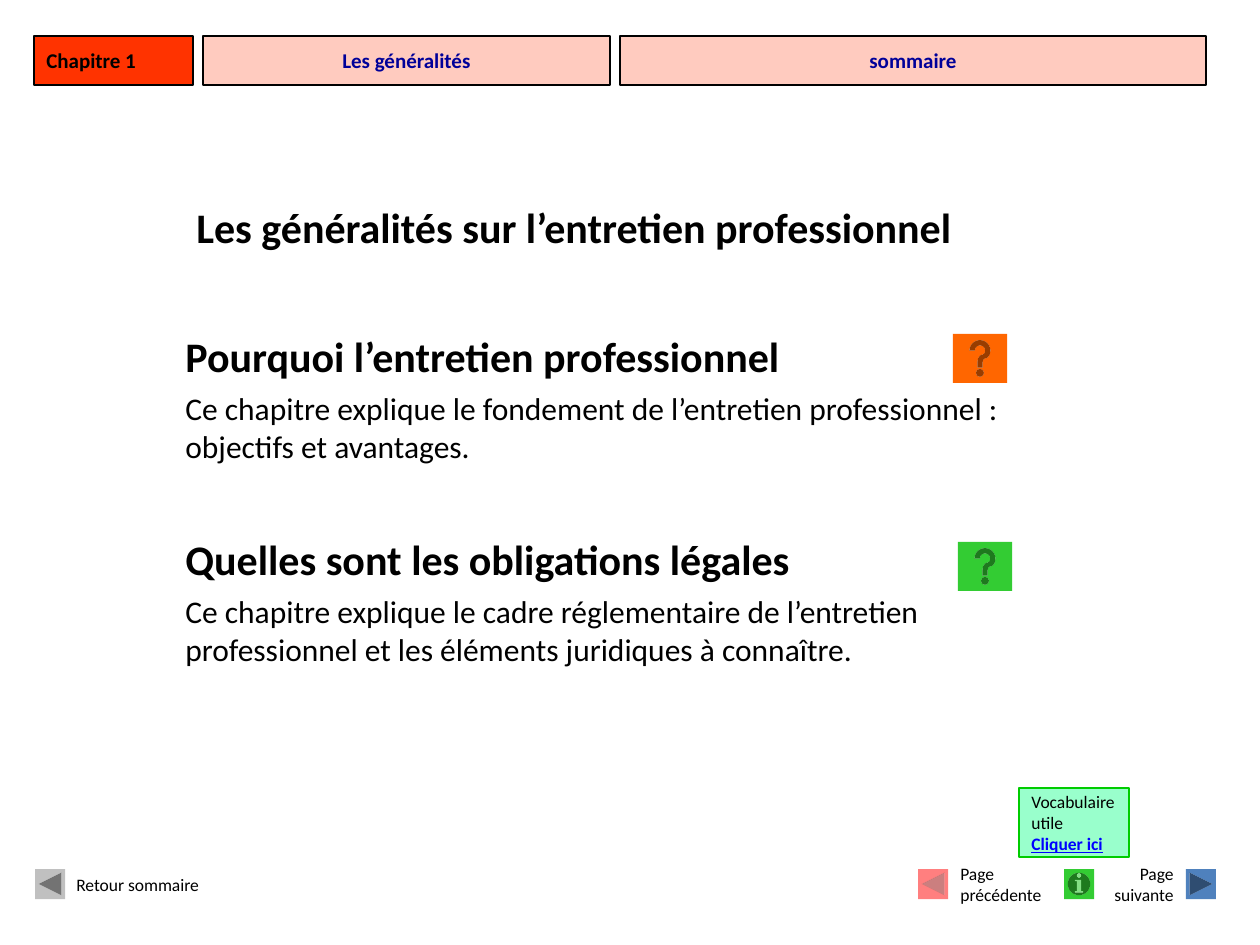
from lxml import etree
from pptx import Presentation
from pptx.dml.color import RGBColor
from pptx.enum.shapes import MSO_SHAPE
from pptx.enum.text import MSO_ANCHOR, PP_ALIGN
from pptx.oxml.ns import qn
from pptx.util import Pt

PX = 914400 / 126
RECT = MSO_SHAPE.RECTANGLE
HELP = MSO_SHAPE.ACTION_BUTTON_HELP
BACK = MSO_SHAPE.ACTION_BUTTON_BACK_OR_PREVIOUS
NEXT = MSO_SHAPE.ACTION_BUTTON_FORWARD_OR_NEXT
INFO = MSO_SHAPE.ACTION_BUTTON_INFORMATION
LEFT, CENTER, RIGHT = PP_ALIGN.LEFT, PP_ALIGN.CENTER, PP_ALIGN.RIGHT
TOP, MIDDLE = MSO_ANCHOR.TOP, MSO_ANCHOR.MIDDLE

BLACK = RGBColor(0x00, 0x00, 0x00)
NAVY = RGBColor(0x00, 0x00, 0x99)
LINK_BLUE = RGBColor(0x00, 0x00, 0xFF)
RED_ORANGE = RGBColor(0xFF, 0x33, 0x00)
ORANGE = RGBColor(0xFF, 0x66, 0x00)
RED = RGBColor(0xFF, 0x00, 0x00)
GREEN = RGBColor(0x33, 0xCC, 0x33)
MINT = RGBColor(0x99, 0xFF, 0xCC)
MINT_EDGE = RGBColor(0x00, 0xCC, 0x00)
GREY = RGBColor(0xC0, 0xC0, 0xC0)
BLUE = RGBColor(0x4F, 0x81, 0xBD)


def paint(shape, color, opacity=100, edge=None):
    """Fill a shape, with opacity in percent and an optional thin edge."""
    shape.fill.solid()
    shape.fill.fore_color.rgb = color
    if opacity < 100:
        rgb = shape._element.spPr.find(qn("a:solidFill")).find(qn("a:srgbClr"))
        etree.SubElement(rgb, qn("a:alpha")).set("val", str(opacity * 1000))
    if edge is None:
        shape.line.fill.background()
    else:
        shape.line.color.rgb = edge
        shape.line.width = Pt(0.75)
    shape.shadow.inherit = False


def write(shape, lines, align=LEFT, anchor=MIDDLE):
    """Write one paragraph per (text, size, bold, color, space before) line."""
    frame = shape.text_frame
    frame.word_wrap = True
    frame.vertical_anchor = anchor
    if align == LEFT:
        frame.margin_right = 0
    for i, (text, size, bold, color, before) in enumerate(lines):
        paragraph = frame.add_paragraph() if i else frame.paragraphs[0]
        paragraph.alignment = align
        paragraph.space_before = Pt(before)
        run = paragraph.add_run()
        run.text = text
        run.font.name = "Calibri"
        run.font.size = Pt(size)
        run.font.bold = bold
        run.font.color.rgb = color


prs = Presentation()
prs.slide_width, prs.slide_height = round(1260 * PX), round(945 * PX)
slide = prs.slides.add_slide(prs.slide_layouts[5])
shapes = slide.shapes

# Header band
BAND_TOP, BAND_HEIGHT = 36, 49
section = shapes.title
section.left, section.top = round(203 * PX), round(BAND_TOP * PX)
section.width, section.height = round(407 * PX), round(BAND_HEIGHT * PX)
paint(section, RED_ORANGE, 25, BLACK)
write(section, [("Les généralités", 12, True, NAVY, 0)], CENTER)

for left, width, label, opacity, color, align in [
    (34, 159, "Chapitre 1", 100, BLACK, LEFT),
    (620, 586, "sommaire", 25, NAVY, CENTER),
]:
    tab = shapes.add_shape(RECT, *(round(n * PX) for n in (left, BAND_TOP, width, BAND_HEIGHT)))
    paint(tab, RED_ORANGE, opacity, BLACK)
    write(tab, [(label, 12, True, color, 0)], align)

# Heading, chapter summaries and footer labels
heading = [("Les généralités sur l’entretien professionnel", 24, True, BLACK, 0)]
summaries = [
    ("Pourquoi l’entretien professionnel", 24, True, BLACK, 0),
    ("Ce chapitre explique le fondement de l’entretien professionnel : "
     "objectifs et avantages.", 18, False, BLACK, 5),
    ("Quelles sont les obligations légales", 24, True, BLACK, 39),
    ("Ce chapitre explique le cadre réglementaire de l’entretien "
     "professionnel et les éléments juridiques à connaître.", 18, False, BLACK, 5),
]
home, previous, following = (
    [(text, 10, False, BLACK, 0) for text in label]
    for label in (["Retour sommaire"], ["Page", "précédente"], ["Page", "suivante"])
)
for box, lines, align, anchor in [
    ((184, 195, 907, 63), heading, LEFT, TOP),
    ((173, 324, 853, 418), summaries, LEFT, TOP),
    ((64, 860, 228, 49), home, LEFT, MIDDLE),
    ((948, 860, 110, 49), previous, LEFT, MIDDLE),
    ((1047, 860, 139, 49), following, RIGHT, MIDDLE),
]:
    write(shapes.add_textbox(*(round(n * PX) for n in box)), lines, align, anchor)

# Vocabulary box
vocabulary = shapes.add_shape(RECT, *(round(n * PX) for n in (1019, 788, 110, 69)))
paint(vocabulary, MINT, edge=MINT_EDGE)
write(vocabulary, [
    ("Vocabulaire", 10, False, BLACK, 0),
    ("utile", 10, False, BLACK, 0),
    ("Cliquer ici", 10, True, LINK_BLUE, 0),
])
vocabulary.text_frame.paragraphs[-1].runs[0].font.underline = True

# Help and navigation buttons
for kind, box, color, opacity in [
    (HELP, (953, 334, 54, 49), ORANGE, 100),
    (HELP, (958, 542, 54, 49), GREEN, 100),
    (BACK, (35, 869, 30, 30), GREY, 100),
    (BACK, (918, 869, 30, 30), RED, 50),
    (INFO, (1064, 869, 30, 30), GREEN, 100),
    (NEXT, (1186, 869, 30, 30), BLUE, 100),
]:
    paint(shapes.add_shape(kind, *(round(n * PX) for n in box)), color, opacity)

prs.save("out.pptx")
